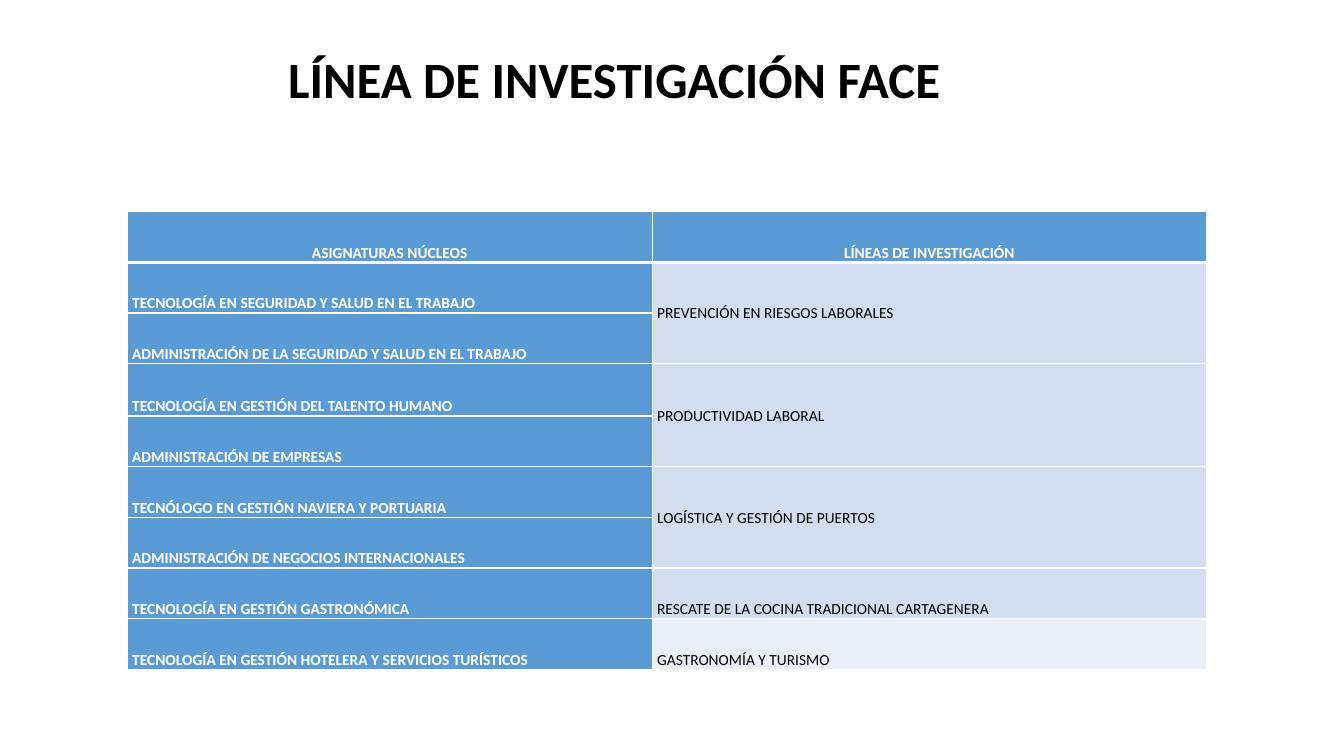
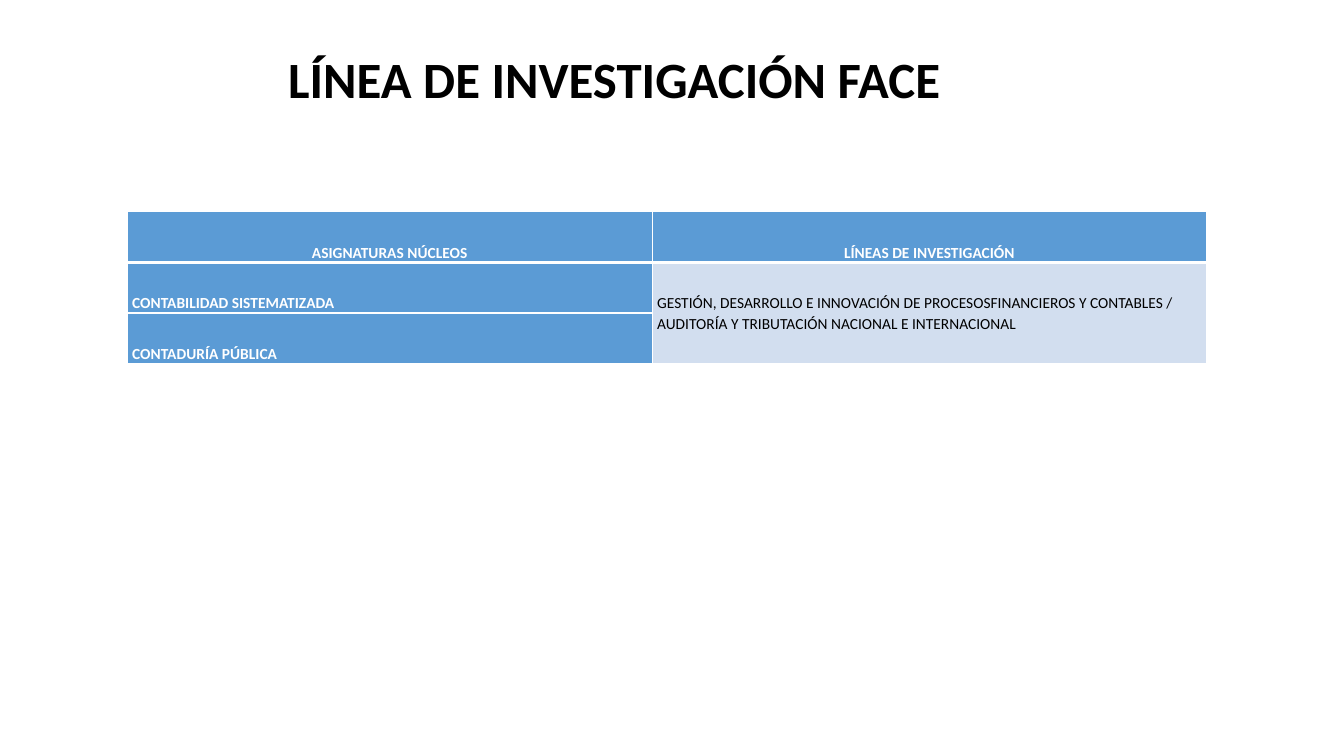
"""Build two slides that list the research lines of each core programme."""
from lxml.etree import SubElement
from pptx import Presentation
from pptx.dml.color import RGBColor
from pptx.enum.text import MSO_ANCHOR as Anchor, PP_ALIGN as Align
from pptx.oxml.ns import qn
from pptx.util import Pt

TITLE = "LÍNEA DE INVESTIGACIÓN FACE"
HEADERS = ("ASIGNATURAS NÚCLEOS", "LÍNEAS DE INVESTIGACIÓN")
SLIDES = [
    [
        (("TECNOLOGÍA EN SEGURIDAD Y SALUD EN EL TRABAJO",
          "ADMINISTRACIÓN DE LA SEGURIDAD Y SALUD EN EL TRABAJO"),
         "PREVENCIÓN EN RIESGOS LABORALES"),
        (("TECNOLOGÍA EN GESTIÓN DEL TALENTO HUMANO",
          "ADMINISTRACIÓN DE EMPRESAS"),
         "PRODUCTIVIDAD LABORAL"),
        (("TECNÓLOGO EN GESTIÓN NAVIERA Y PORTUARIA",
          "ADMINISTRACIÓN DE NEGOCIOS INTERNACIONALES"),
         "LOGÍSTICA Y GESTIÓN DE PUERTOS"),
        (("TECNOLOGÍA EN GESTIÓN GASTRONÓMICA",),
         "RESCATE DE LA COCINA TRADICIONAL CARTAGENERA"),
        (("TECNOLOGÍA EN GESTIÓN HOTELERA Y SERVICIOS TURÍSTICOS",),
         "GASTRONOMÍA Y TURISMO"),
    ],
    [
        (("CONTABILIDAD SISTEMATIZADA", "CONTADURÍA PÚBLICA"),
         "GESTIÓN, DESARROLLO E INNOVACIÓN DE PROCESOSFINANCIEROS Y CONTABLES / "
         "AUDITORÍA Y TRIBUTACIÓN NACIONAL E INTERNACIONAL"),
    ],
]

COLORS = {"white": "FFFFFF", "black": "000000", "blue": "5B9BD5",
          "odd_band": "D2DEEF", "even_band": "EAEFF7"}
FONT = "Calibri"
TITLE_BOX = (103.5, 34, 671, 45)
TABLE_LEFT, TABLE_TOP = 90.9, 151.2
COLUMN_WIDTHS = (375, 396)
ROW_HEIGHT = 36.2
TALL_ROWS = {3: 37.4}


def color(name):
    return RGBColor.from_string(COLORS[name])


def style_font(font, size, color_name, bold):
    font.name, font.size, font.bold = FONT, Pt(size), bold
    font.color.rgb = color(color_name)


def place_title(layout):
    title = layout.placeholders[0]
    title.left, title.top, title.width, title.height = map(Pt, TITLE_BOX)


def add_title(slide):
    frame = slide.shapes.title.text_frame
    frame.text = TITLE
    frame.vertical_anchor = Anchor.TOP
    frame.margin_left = frame.margin_top = frame.margin_right = frame.margin_bottom = 0
    paragraph = frame.paragraphs[0]
    paragraph.alignment = Align.CENTER
    style_font(paragraph.runs[0].font, 36.3, "black", True)


def style_borders(cell, row):
    widths = {"lnL": 1, "lnR": 1, "lnT": 3 if row == 1 else 1, "lnB": 3 if row == 0 else 1}
    properties = cell._tc.get_or_add_tcPr()
    for tag, width in widths.items():
        line = SubElement(properties, qn(f"a:{tag}"), w=str(Pt(width)))
        fill = SubElement(line, qn("a:solidFill"))
        SubElement(fill, qn("a:srgbClr"), val=COLORS["white"])


def style_cell(cell, row, column):
    strong = row == 0 or column == 0
    band = "odd_band" if row % 2 else "even_band"
    style_borders(cell, row)
    cell.fill.solid()
    cell.fill.fore_color.rgb = color("blue" if strong else band)
    cell.margin_left = cell.margin_right = Pt(3.5)
    cell.margin_top = cell.margin_bottom = 0
    cell.vertical_anchor = Anchor.MIDDLE if cell.is_merge_origin else Anchor.BOTTOM
    paragraph = cell.text_frame.paragraphs[0]
    paragraph.line_spacing = 1.07
    paragraph.alignment = Align.CENTER if row == 0 else Align.LEFT
    for run in paragraph.runs:
        style_font(run.font, 11, "white" if strong else "black", strong)


def add_lines_table(slide, groups):
    heights = [TALL_ROWS.get(row, ROW_HEIGHT)
               for row in range(1 + sum(len(subjects) for subjects, _ in groups))]
    table = slide.shapes.add_table(
        len(heights), len(HEADERS), Pt(TABLE_LEFT), Pt(TABLE_TOP),
        Pt(sum(COLUMN_WIDTHS)), Pt(sum(heights))).table
    for column, width in enumerate(COLUMN_WIDTHS):
        table.columns[column].width = Pt(width)
        table.cell(0, column).text = HEADERS[column]
    for row, height in enumerate(heights):
        table.rows[row].height = Pt(height)

    first = 1
    for subjects, research_line in groups:
        last = first + len(subjects) - 1
        for row, subject in enumerate(subjects, first):
            table.cell(row, 0).text = subject
        table.cell(first, 1).text = research_line
        if last > first:
            table.cell(first, 1).merge(table.cell(last, 1))
        first = last + 1

    for row in range(len(heights)):
        for column in range(len(HEADERS)):
            style_cell(table.cell(row, column), row, column)


def main():
    presentation = Presentation()
    presentation.slide_width, presentation.slide_height = Pt(960), Pt(540)
    layout = presentation.slide_layouts.get_by_name("Title Only")
    place_title(layout)
    for groups in SLIDES:
        slide = presentation.slides.add_slide(layout)
        add_title(slide)
        add_lines_table(slide, groups)
    presentation.save("out.pptx")


if __name__ == "__main__":
    main()
